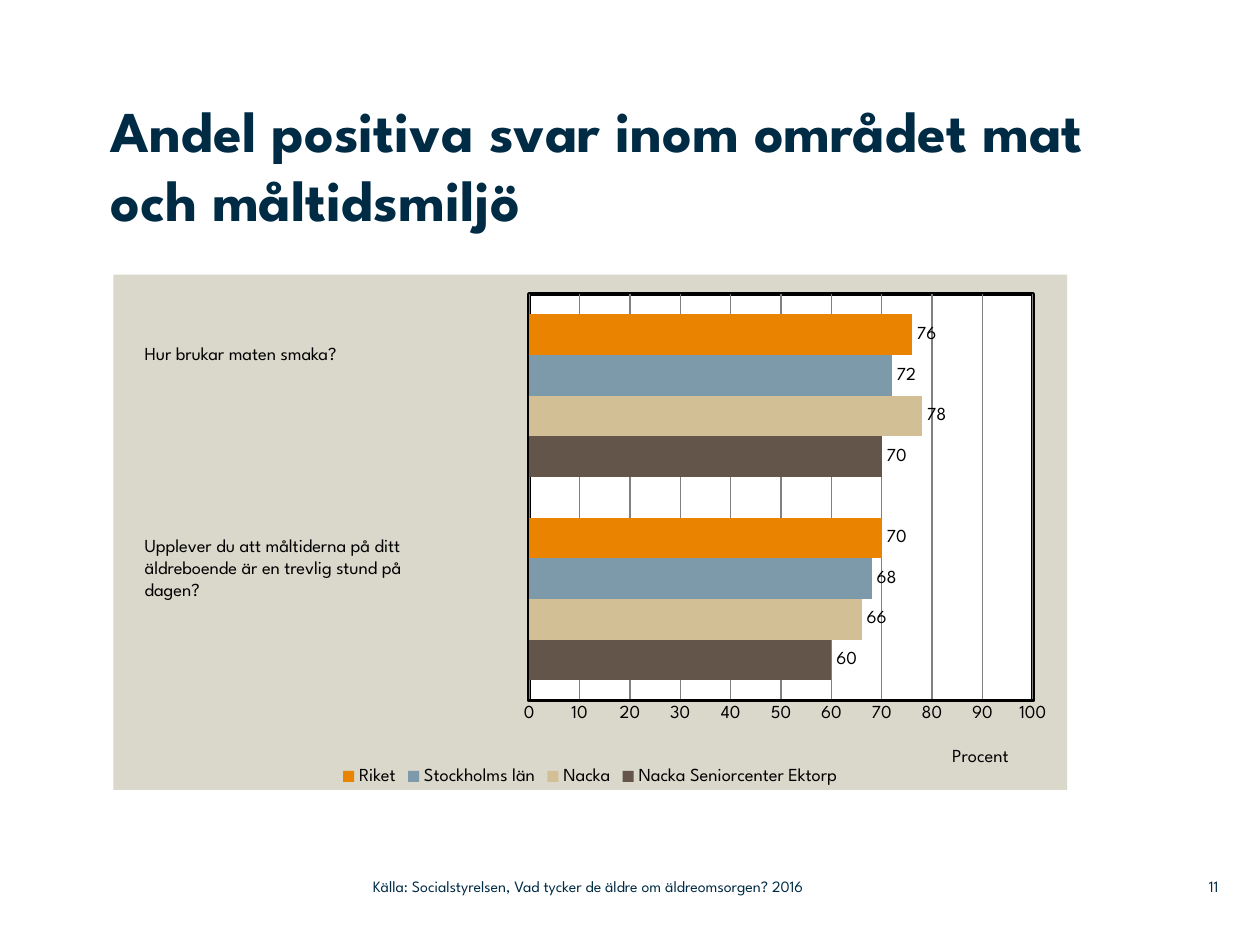
import pptx
import pptx.util
import pptx.chart.data
import pptx.dml.color
import pptx.enum.chart
import pptx.enum.text
import pptx.oxml
import pptx.oxml.ns

Inches = pptx.util.Inches
Pt = pptx.util.Pt
RGBColor = pptx.dml.color.RGBColor
Align = pptx.enum.text.PP_ALIGN
Anchor = pptx.enum.text.MSO_ANCHOR
qn = pptx.oxml.ns.qn

FONT = "League Spartan"
NAVY = RGBColor(0x00, 0x2B, 0x45)
BLACK = RGBColor(0x00, 0x00, 0x00)
WHITE = RGBColor(0xFF, 0xFF, 0xFF)
SAND = RGBColor(0xDA, 0xD7, 0xCB)
GREY = RGBColor(0x80, 0x80, 0x80)
SERIES = (
    ("Nacka Seniorcenter Ektorp", (60, 70), RGBColor(0x63, 0x55, 0x49)),
    ("Nacka", (66, 78), RGBColor(0xD3, 0xBF, 0x96)),
    ("Stockholms län", (68, 72), RGBColor(0x7D, 0x9A, 0xAA)),
    ("Riket", (70, 76), RGBColor(0xE9, 0x83, 0x00)),
)


def style(font, size, color=BLACK, bold=False):
    """Set the typeface, size, colour and weight of a font."""
    font.name = FONT
    font.size = Pt(size)
    font.bold = bold
    font.color.rgb = color


def add_text(slide, box, lines, size, color=BLACK, bold=False,
             align=Align.LEFT, anchor=Anchor.TOP, inset=(0, 0)):
    """Add a text box with one paragraph for each line."""
    frame = slide.shapes.add_textbox(*map(Inches, box)).text_frame
    frame.word_wrap = True
    frame.vertical_anchor = anchor
    frame.margin_left = frame.margin_right = Inches(inset[0])
    frame.margin_top = frame.margin_bottom = Inches(inset[1])
    for index, line in enumerate(lines):
        para = frame.paragraphs[0] if index == 0 else frame.add_paragraph()
        para.alignment = align
        run = para.add_run()
        run.text = line
        style(run.font, size, color, bold)


def make_part(body):
    """Return a chart element made from an XML body."""
    spaces = pptx.oxml.ns.nsdecls("c", "a")
    head, tail = body.split(">", 1)
    return pptx.oxml.parse_xml(f"{head} {spaces}>{tail}")


def make_fill(color, line):
    """Return shape properties with a solid fill and the given line."""
    return make_part(
        f'<c:spPr><a:solidFill><a:srgbClr val="{color}"/></a:solidFill>'
        f'{line}</c:spPr>')


def set_layout(parent, index, **values):
    """Give a chart part a manual layout."""
    for old in parent.findall(qn("c:layout")):
        parent.remove(old)
    items = "".join(f'<c:{key} val="{val}"/>' for key, val in values.items())
    parent.insert(index, make_part(
        f"<c:layout><c:manualLayout>{items}</c:manualLayout></c:layout>"))


def style_axes(chart):
    """Hide the category axis and set up the percent axis."""
    chart.category_axis.visible = False
    axis = chart.value_axis
    axis.minimum_scale, axis.maximum_scale, axis.major_unit = 0, 100, 10
    axis.major_tick_mark = pptx.enum.chart.XL_TICK_MARK.NONE
    axis.has_major_gridlines = True
    grid = axis.major_gridlines.format.line
    grid.color.rgb, grid.width = GREY, Pt(0.75)
    axis.format.line.color.rgb = BLACK
    axis.format.line.width = Pt(2)
    style(axis.tick_labels.font, 10.5)
    run = axis.axis_title.text_frame.paragraphs[0].add_run()
    run.text = "Procent"
    style(run.font, 10.5)
    title = chart._chartSpace.find(".//" + qn("c:valAx") + "/" + qn("c:title"))
    set_layout(title, 1, xMode="edge", yMode="edge", x=0.876, y=0.91)


def style_bars(plot):
    """Colour the bars and show their values."""
    plot.gap_width = 100
    plot.overlap = 0
    plot.vary_by_categories = False
    for bars, (_, _, color) in zip(plot.series, SERIES):
        bars.format.fill.solid()
        bars.format.fill.fore_color.rgb = color
        bars.format.line.fill.background()
        labels = bars.data_labels
        labels.show_value = True
        labels.position = pptx.enum.chart.XL_LABEL_POSITION.OUTSIDE_END
        style(labels.font, 10.5)


def add_bars(slide, box):
    """Add the bar chart of positive answers."""
    data = pptx.chart.data.CategoryChartData()
    data.categories = ["1", "2"]
    for name, values, _ in SERIES:
        data.add_series(name, values)
    kind = pptx.enum.chart.XL_CHART_TYPE.BAR_CLUSTERED
    chart = slide.shapes.add_chart(kind, *map(Inches, box), data).chart
    chart.has_title = False
    style(chart.font, 10.5)
    chart.has_legend = True
    chart.legend.position = pptx.enum.chart.XL_LEGEND_POSITION.BOTTOM
    chart.legend.include_in_layout = False
    style(chart.legend.font, 10.5)
    style_axes(chart)
    style_bars(chart.plots[0])

    space = chart._chartSpace
    area = space.find(".//" + qn("c:plotArea"))
    set_layout(area, 0, layoutTarget="inner", xMode="edge", yMode="edge",
               x=0.436, y=0.038, w=0.528, h=0.789)
    border = (f'<a:ln w="{Pt(2)}"><a:solidFill><a:srgbClr val="{BLACK}"/>'
              "</a:solidFill></a:ln>")
    area.append(make_fill(WHITE, border))
    space.find(qn("c:chart")).addnext(
        make_fill(SAND, "<a:ln><a:noFill/></a:ln>"))


def add_panel(slide, box):
    """Add the chart with its questions on the left."""
    left, top, _, _ = box
    add_bars(slide, box)
    inset = (0.1, 0.05)
    add_text(slide, (left + 0.15, top + 0.49, 2.97, 0.28),
             ["Hur brukar maten smaka?"], 10.5, inset=inset)
    add_text(slide, (left + 0.15, top + 2.01, 2.93, 0.63),
             ["Upplever du att måltiderna på ditt äldreboende är en trevlig "
              "stund på", "dagen?"], 10.5, inset=inset)


def add_footer(slide, box):
    """Add the source line and the page number."""
    left, top, width, height = box
    add_text(slide, (left, top, 4.43, height),
             ["Källa: Socialstyrelsen, Vad tycker de äldre om "
              "äldreomsorgen? 2016"], 9, NAVY, anchor=Anchor.MIDDLE)
    add_text(slide, (left + width - 0.47, top, 0.47, height), ["11"], 9, NAVY,
             align=Align.RIGHT, anchor=Anchor.MIDDLE)


def main():
    """Build and save the slide."""
    deck = pptx.Presentation()
    deck.slide_width, deck.slide_height = Inches(10), Inches(7.5)
    slide = deck.slides.add_slide(deck.slide_layouts[6])
    add_text(slide, (0.88, 0.75, 8.42, 1.42),
             ["Andel positiva svar inom området mat och måltidsmiljö"],
             33, NAVY, bold=True)
    add_panel(slide, (0.9, 2.18, 7.57, 4.09))
    add_footer(slide, (2.96, 6.89, 6.71, 0.29))
    deck.save("out.pptx")


if __name__ == "__main__":
    main()
